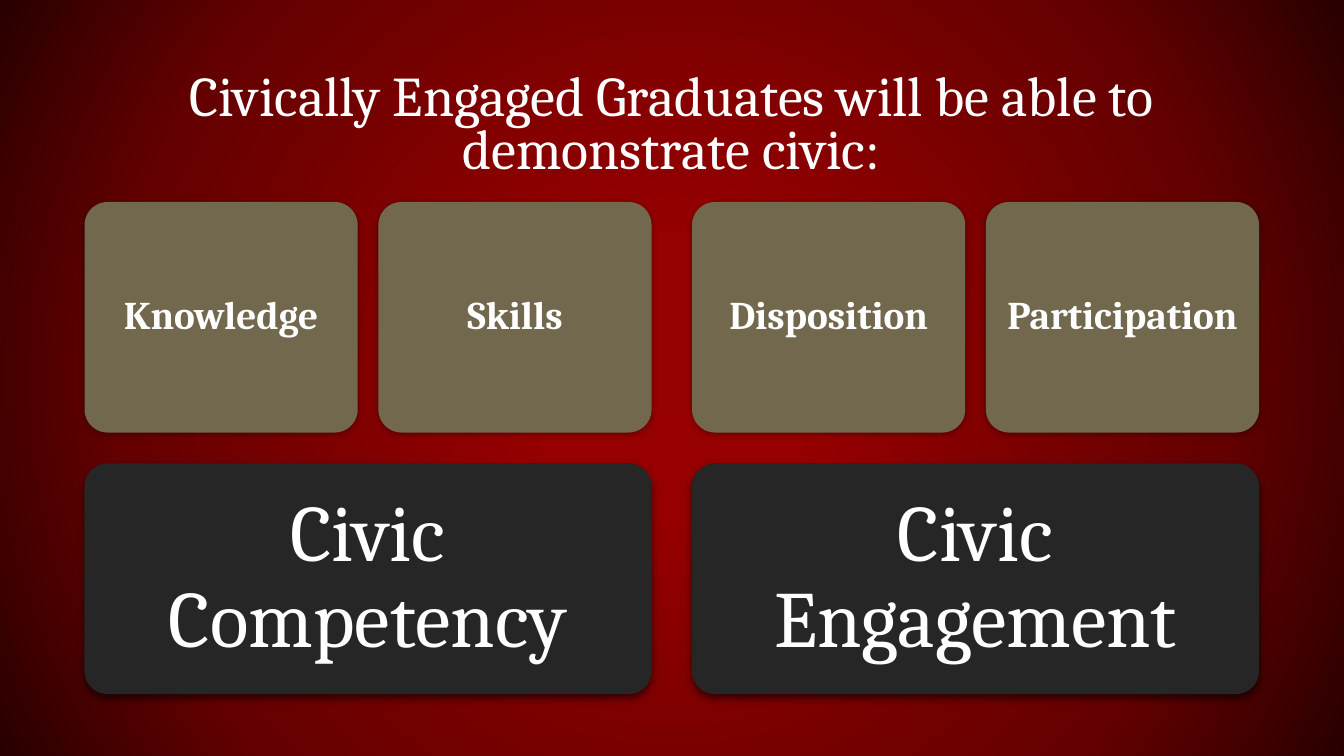
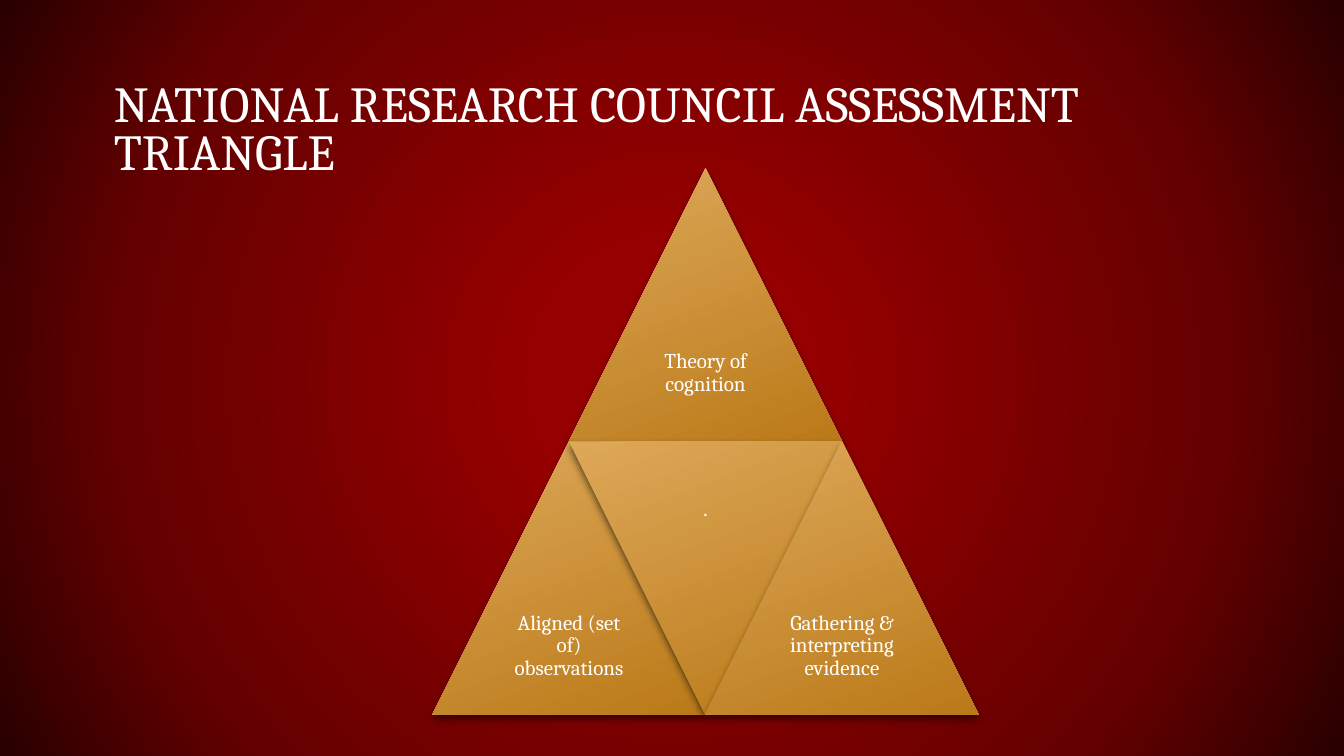
from pptx import Presentation
from pptx.dml.color import RGBColor
from pptx.enum.shapes import MSO_SHAPE
from pptx.enum.text import MSO_ANCHOR, MSO_AUTO_SIZE, PP_ALIGN
from pptx.oxml import parse_xml
from pptx.oxml.ns import nsdecls, qn
from pptx.util import Cm, Pt

FONT = "Cambria"
WHITE = RGBColor(0xFF, 0xFF, 0xFF)
CHARCOAL = RGBColor(0x26, 0x26, 0x26)
OLIVE = RGBColor(0x71, 0x68, 0x4E)
LIGHT_GOLD = RGBColor(0xDD, 0xA8, 0x59)
DARK_GOLD = RGBColor(0xBB, 0x7A, 0x19)
BLACK = RGBColor(0, 0, 0)
BACKGROUND_STOPS = (
    (17, RGBColor(0x96, 0x00, 0x00)),
    (71, RGBColor(0x65, 0x00, 0x00)),
    (100, RGBColor(0x29, 0x00, 0x00)),
)
TITLE_ONLY = 5

# opacity in percent, blur and distance in points
STRONG_SHADOW = (60, 6, 3)
SOFT_SHADOW = (32, 5, 1)

SKILL_PAIRS = (
    ("Civic Competency", ("Knowledge", "Skills")),
    ("Civic Engagement", ("Disposition", "Participation")),
)


def set_background(master):
    """Give every slide a radial gradient, brightest in the middle."""
    stops = "".join(
        f'<a:gs pos="{position * 1000}"><a:srgbClr val="{color}"/></a:gs>'
        for position, color in BACKGROUND_STOPS
    )
    gradient = parse_xml(
        f'<a:gradFill {nsdecls("a")} rotWithShape="1"><a:gsLst>{stops}</a:gsLst>'
        '<a:path path="circle">'
        '<a:fillToRect l="50000" t="50000" r="50000" b="50000"/>'
        "</a:path></a:gradFill>"
    )
    master.background.fill.solid()
    solid_fill = master.element.find(".//" + qn("p:bgPr")).find(qn("a:solidFill"))
    solid_fill.getparent().replace(solid_fill, gradient)


def format_paragraph(paragraph, size, alignment, line_spacing, bold=False):
    paragraph.alignment = alignment
    paragraph.line_spacing = line_spacing
    font = paragraph.font
    font.name = FONT
    font.size = Pt(size)
    font.bold = bold
    font.color.rgb = WHITE


def set_margins(frame, horizontal, vertical):
    frame.margin_left = frame.margin_right = Cm(horizontal)
    frame.margin_top = frame.margin_bottom = Cm(vertical)


def add_titled_slide(presentation, text, left, width, size, alignment):
    slide = presentation.slides.add_slide(presentation.slide_layouts[TITLE_ONLY])
    title = slide.shapes.title
    title.left, title.top = Cm(left), Cm(1.35)
    title.width, title.height = Cm(width), Cm(3.38)
    frame = title.text_frame
    frame.text = text
    frame.word_wrap = True
    frame.auto_size = MSO_AUTO_SIZE.NONE
    frame.vertical_anchor = MSO_ANCHOR.BOTTOM
    set_margins(frame, 0.33, 0.18)
    format_paragraph(frame.paragraphs[0], size, alignment, 0.8)
    return slide


def add_shadow(shape, opacity, blur, distance):
    shape.shadow.inherit = False
    effects = shape._element.spPr.find(qn("a:effectLst"))
    effects.append(parse_xml(
        f'<a:outerShdw {nsdecls("a")} blurRad="{Pt(blur)}" dist="{Pt(distance)}" '
        'dir="5400000" algn="ctr" rotWithShape="0">'
        f'<a:srgbClr val="{BLACK}"><a:alpha val="{opacity * 1000}"/></a:srgbClr>'
        "</a:outerShdw>"
    ))


def add_labelled_shape(slide, kind, box, text, size, margin, shadow, bold=False):
    shape = slide.shapes.add_shape(kind, *(Cm(length) for length in box))
    shape.line.fill.background()
    add_shadow(shape, *shadow)
    frame = shape.text_frame
    frame.text = text
    frame.word_wrap = True
    frame.vertical_anchor = MSO_ANCHOR.MIDDLE
    set_margins(frame, margin, margin)
    format_paragraph(frame.paragraphs[0], size, PP_ALIGN.CENTER, 0.9, bold)
    return shape


def add_tile(slide, box, text, color, size, margin, shadow, bold=False):
    tile = add_labelled_shape(
        slide, MSO_SHAPE.ROUNDED_RECTANGLE, box, text, size, margin, shadow, bold
    )
    tile.adjustments[0] = 0.1
    tile.fill.solid()
    tile.fill.fore_color.rgb = color


def add_skill_tiles(slide, left, top, width, height):
    """Place each outcome in a wide tile below its two small skill tiles."""
    column_gap, tile_gap, row_gap = 1.02, 0.52, 0.78
    column_width = (width - column_gap) / 2
    tile_width = (column_width - tile_gap) / 2
    row_height = (height - row_gap) / 2
    for column, (outcome, skills) in enumerate(SKILL_PAIRS):
        column_left = left + column * (column_width + column_gap)
        outcome_box = (column_left, top + row_height + row_gap, column_width, row_height)
        add_tile(slide, outcome_box, outcome, CHARCOAL, 57, 0.6, STRONG_SHADOW)
        for index, skill in enumerate(skills):
            tile_left = column_left + index * (tile_width + tile_gap)
            skill_box = (tile_left, top, tile_width, row_height)
            add_tile(slide, skill_box, skill, OLIVE, 28, 0.3, SOFT_SHADOW, bold=True)


def add_assessment_triangle(slide, left, top, size):
    """Build a large triangle from four half-size ones, the middle one inverted."""
    half = size / 2
    upright, inverted = MSO_SHAPE.ISOSCELES_TRIANGLE, MSO_SHAPE.FLOWCHART_MERGE
    # kind, column in quarters of the size, row in halves, label
    pieces = (
        (upright, 1, 0, "Theory of cognition"),
        (upright, 0, 1, "Aligned (set of) observations"),
        (inverted, 1, 1, "."),
        (upright, 2, 1, "Gathering & interpreting evidence"),
    )
    for kind, column, row, label in pieces:
        box = (left + column * half / 2, top + row * half, half, half)
        piece = add_labelled_shape(slide, kind, box, label, 15, 0.15, STRONG_SHADOW)
        piece.fill.gradient()
        piece.fill.gradient_angle = 291
        for stop, color in zip(piece.fill.gradient_stops, (LIGHT_GOLD, DARK_GOLD)):
            stop.color.rgb = color


def main():
    presentation = Presentation()
    presentation.slide_width, presentation.slide_height = Cm(33.87), Cm(19.05)
    set_background(presentation.slide_master)

    graduates = add_titled_slide(
        presentation,
        "Civically Engaged Graduates will be able to demonstrate civic:",
        2.11, 29.62, 40, PP_ALIGN.CENTER,
    )
    add_skill_tiles(graduates, 2.13, 5.09, 29.6, 12.4)

    assessment = add_titled_slide(
        presentation,
        "NATIONAL RESEARCH COUNCIL ASSESSMENT TRIANGLE",
        2.54, 28.78, 36, PP_ALIGN.LEFT,
    )
    add_assessment_triangle(assessment, 10.9, 4.24, 13.76)

    presentation.save("out.pptx")


if __name__ == "__main__":
    main()
